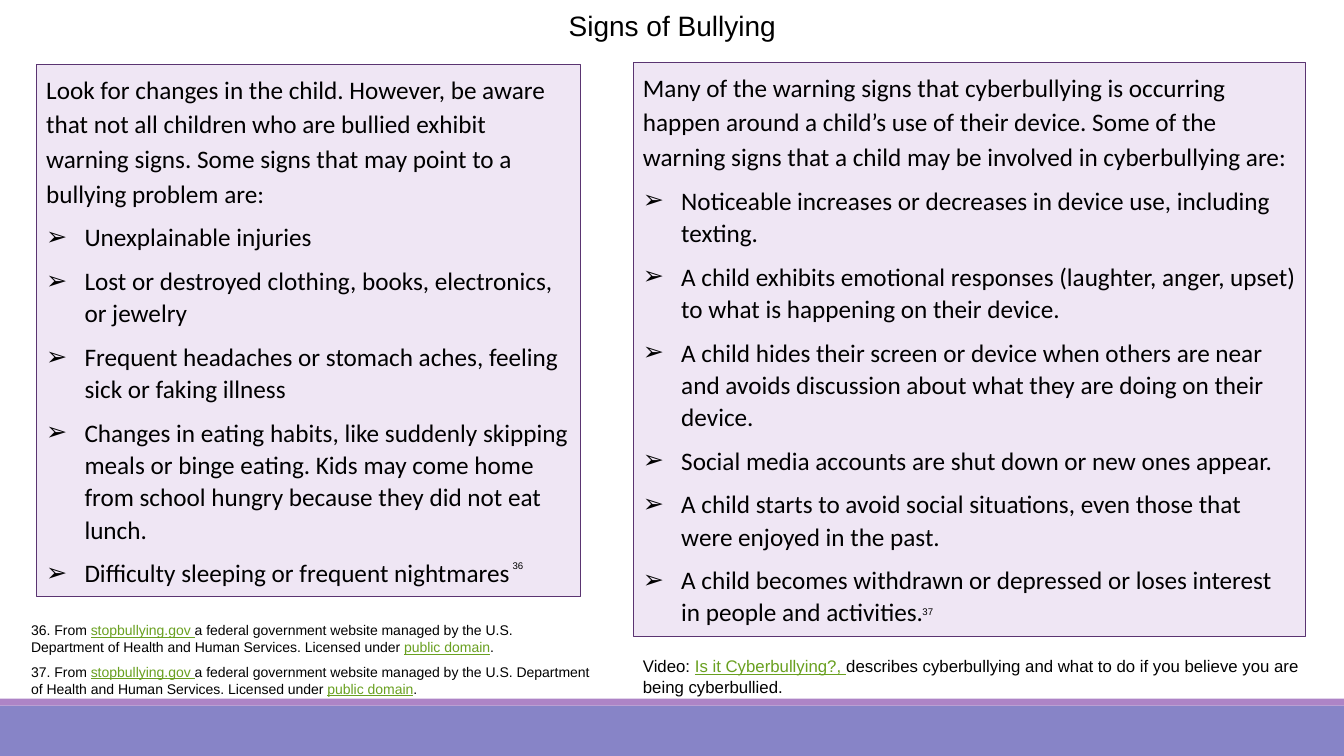
from pptx import Presentation
from pptx.dml.color import RGBColor
from pptx.enum.shapes import MSO_SHAPE
from pptx.enum.text import MSO_ANCHOR, PP_ALIGN
from pptx.util import Inches, Pt
from lxml.etree import SubElement
from pptx.oxml.ns import qn

WIDE, HIGH = Inches(13.33), Inches(7.5)
COL, ROW = WIDE / 100, HIGH / 100
BLACK = RGBColor(0, 0, 0)
GREEN = RGBColor(0x69, 0xA0, 0x20)
LILAC = RGBColor(0xEF, 0xE6, 0xF4)
PLUM = RGBColor(0x5A, 0x34, 0x71)
BLUE = RGBColor(0x87, 0x84, 0xC7)
MAUVE = RGBColor(0xAD, 0x84, 0xC6)

SIGNS = [
    "Look for changes in the child. However, be aware that not all children who are bullied exhibit warning signs. Some signs that may point to a bullying problem are:",
    "Unexplainable injuries",
    "Lost or destroyed clothing, books, electronics, or jewelry",
    "Frequent headaches or stomach aches, feeling sick or faking illness",
    "Changes in eating habits, like suddenly skipping meals or binge eating. Kids may come home from school hungry because they did not eat lunch.",
    "Difficulty sleeping or frequent nightmares",
]
CYBER = [
    "Many of the warning signs that cyberbullying is occurring happen around a child’s use of their device. Some of the warning signs that a child may be involved in cyberbullying are:",
    "Noticeable increases or decreases in device use, including texting.",
    "A child exhibits emotional responses (laughter, anger, upset) to what is happening on their device.",
    "A child hides their screen or device when others are near and avoids discussion about what they are doing on their device.",
    "Social media accounts are shut down or new ones appear.",
    "A child starts to avoid social situations, even those that were enjoyed in the past.",
    "A child becomes withdrawn or depressed or loses interest in people and activities.",
]


def place(box):
    x, y, w, h = box
    return [round(v) for v in (x * COL, y * ROW, w * COL, h * ROW)]


def add_run(para, text, size, face="Arial", link=False):
    run = para.add_run()
    run.text = text
    run.font.size = Pt(size)
    run.font.name = face
    run.font.color.rgb = GREEN if link else BLACK
    if link:
        run.font.underline = True
    return run


def add_rect(slide, box, fill, line=None):
    rect = slide.shapes.add_shape(MSO_SHAPE.RECTANGLE, *place(box))
    rect.shadow.inherit = False
    rect.fill.solid()
    rect.fill.fore_color.rgb = fill
    if line:
        rect.line.color.rgb = line
        rect.line.width = Pt(0.75)
    else:
        rect.line.fill.background()
    return rect


def add_text(slide, box):
    frame = slide.shapes.add_textbox(*place(box)).text_frame
    frame.word_wrap = True
    return frame.paragraphs[0]


def add_bullet(para):
    props = para._p.get_or_add_pPr()
    props.set("marL", str(Inches(0.38)))
    props.set("indent", str(-Inches(0.38)))
    SubElement(props, qn("a:buFont"), typeface="Arial")
    SubElement(props, qn("a:buChar"), char="➢")
    tabs = SubElement(props, qn("a:tabLst"))
    SubElement(tabs, qn("a:tab"), pos=str(Inches(0.5)), algn="l")


def add_panel(slide, box, lines):
    frame = add_rect(slide, box, LILAC, PLUM).text_frame
    frame.word_wrap = True
    frame.vertical_anchor = MSO_ANCHOR.TOP
    for i, text in enumerate(lines):
        para = frame.add_paragraph() if i else frame.paragraphs[0]
        para.alignment = PP_ALIGN.LEFT
        para.line_spacing = 1.07 if i else 1.15
        para.space_after = Pt(8)
        if i:
            add_bullet(para)
        add_run(para, text, 18, "Calibri")


def add_mark(slide, box, dx, dy, text):
    para = add_text(slide, (box[0] + dx, box[1] + dy, 3.45, 3.2))
    run = add_run(para, text, 12)
    run._r.get_or_add_rPr().set("baseline", "30000")


def add_note(slide, box, size, parts):
    para = add_text(slide, box)
    for i, text in enumerate(parts):
        add_run(para, text, size, link=i % 2 == 1)


def add_title(slide, box):
    para = add_text(slide, box)
    para.alignment = PP_ALIGN.CENTER
    add_run(para, "Signs of Bullying", 20)


def add_foot(slide, top):
    add_rect(slide, (0, top + 0.93, 100, 100 - top - 0.93), BLUE)
    add_rect(slide, (0, top, 100, 0.93), MAUVE)


def main():
    deck = Presentation()
    deck.slide_width, deck.slide_height = WIDE, HIGH
    slide = deck.slides.add_slide(deck.slide_layouts[6])
    add_foot(slide, 92.4)
    add_title(slide, (35.4, 0.5, 29.25, 5.87))
    left = (2.7, 8.53, 40.5, 70.4)
    right = (47.1, 8.27, 50.04, 75.87)
    add_panel(slide, left, SIGNS)
    add_panel(slide, right, CYBER)
    for num, top, width in ((36, 81.6, 42.75), (37, 87.07, 43.6)):
        add_note(slide, (1.58, top, width, 6), 10, [
            f"{num}. From ", "stopbullying.gov ",
            "a federal government website managed by the U.S. Department of Health and Human Services. Licensed under ",
            "public domain", "."])
    add_note(slide, (right[0], 86.13, 52.65, 6.67), 12, [
        "Video: ", "Is it Cyberbullying?, ",
        "describes cyberbullying and what to do if you believe you are being cyberbullied."])
    add_mark(slide, left, 34.7, 64.53, "36")
    add_mark(slide, right, 20.8, 70.93, "37")
    deck.save("out.pptx")


if __name__ == "__main__":
    main()
